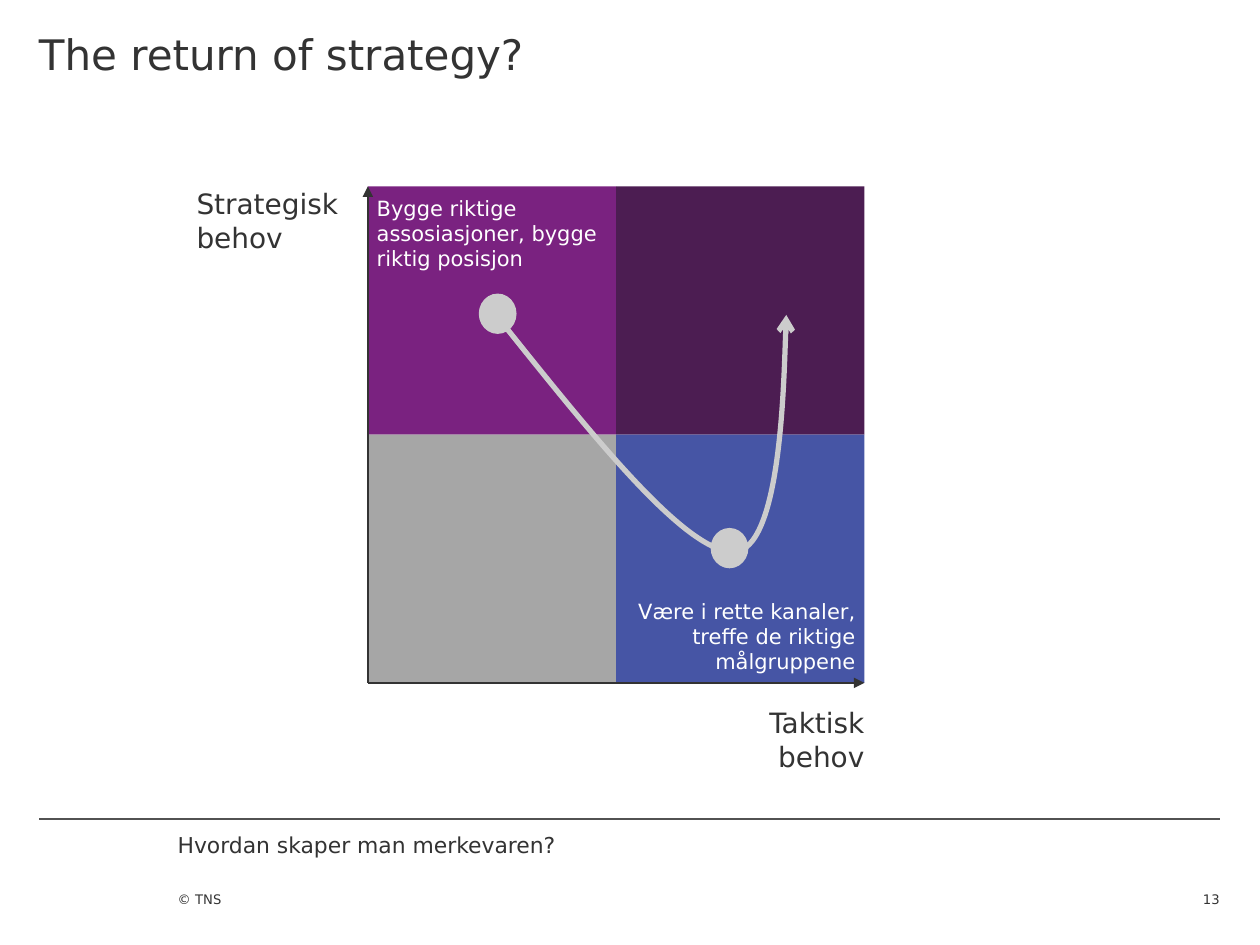
from lxml.etree import SubElement
from pptx import Presentation
from pptx.dml.color import RGBColor
from pptx.enum.shapes import MSO_CONNECTOR, MSO_SHAPE
from pptx.enum.text import MSO_ANCHOR, PP_ALIGN
from pptx.oxml.ns import qn
from pptx.util import Inches, Pt

INK = RGBColor(0x33, 0x33, 0x33)
RULE = RGBColor(0x52, 0x52, 0x52)
WHITE = RGBColor(0xFF, 0xFF, 0xFF)
PURPLE = RGBColor(0x7A, 0x22, 0x80)
PLUM = RGBColor(0x4C, 0x1D, 0x52)
GREY = RGBColor(0xA6, 0xA6, 0xA6)
BLUE = RGBColor(0x46, 0x55, 0xA5)
SILVER = RGBColor(0xCC, 0xCC, 0xCC)

WIDE, HIGH = 10, 7.5
LEFT, RIGHT = 0.31, 9.68
INDENT = 1.41
COL, ROW, CELL = 2.92, 1.48, 1.97
PAD = 0.07
DOT = (0.3, 0.32)
LABEL = (1.22, 0.39)
END, BASE = COL + 2 * CELL, ROW + 2 * CELL


def assign(item, values):
    for name, value in values.items():
        setattr(item, name, value)


def write(shape, text, size, color=INK, align=PP_ALIGN.LEFT,
          anchor=MSO_ANCHOR.TOP, pads=(0, 0, 0, 0)):
    frame = shape.text_frame
    sides = ("margin_left", "margin_top", "margin_right", "margin_bottom")
    assign(frame, dict(zip(sides, map(Inches, pads))))
    assign(frame, {"word_wrap": True, "vertical_anchor": anchor, "text": text})
    para = frame.paragraphs[0]
    para.alignment = align
    assign(para.runs[0].font, {"name": "DejaVu Sans", "size": Pt(size)})
    para.runs[0].font.color.rgb = color


def label(slide, box, text, size, **style):
    write(slide.shapes.add_textbox(*map(Inches, box)), text, size, **style)


def block(slide, kind, box, color):
    shape = slide.shapes.add_shape(kind, *map(Inches, box))
    shape.shadow.inherit = False
    shape.fill.solid()
    shape.fill.fore_color.rgb = color
    shape.line.fill.background()
    return shape


def stroke(shape, color, width, head=None):
    shape.line.color.rgb = color
    shape.line.width = Pt(width)
    props = shape._element.spPr
    if head:
        SubElement(props.find(qn("a:ln")), qn("a:tailEnd"), type=head)
    if props.find(qn("a:effectLst")) is None:
        SubElement(props, qn("a:effectLst"))


def line(slide, start, stop, color, width, head=None):
    ends = map(Inches, (*start, *stop))
    link = slide.shapes.add_connector(MSO_CONNECTOR.STRAIGHT, *ends)
    stroke(link, color, width, head)


def curve(slide, points, color, width, head):
    """Draw a chain of cubic curves: a start, then three points for each."""
    spots = [(Inches(x), Inches(y)) for x, y in points]
    pen = slide.shapes.build_freeform(*spots[0])
    pen.add_line_segments(spots[1:], close=False)
    shape = pen.convert_to_shape()
    shape.fill.background()
    stroke(shape, color, width, head)
    steps = list(shape._element.iter(qn("a:lnTo")))
    for first in range(0, len(steps), 3):
        trio = steps[first:first + 3]
        bend = SubElement(trio[0].getparent(), qn("a:cubicBezTo"))
        for step in trio:
            bend.append(step[0])
            step.getparent().remove(step)


def matrix(slide):
    colors = ((PURPLE, PLUM), (GREY, BLUE))
    cells = [
        block(slide, MSO_SHAPE.RECTANGLE,
              (COL + col * CELL, ROW + row * CELL, CELL, CELL), color)
        for row, pair in enumerate(colors) for col, color in enumerate(pair)
    ]
    pads = (PAD,) * 4
    write(cells[0], "Bygge riktige assosiasjoner, bygge riktig posisjon",
          12, WHITE, pads=pads)
    write(cells[3], "Være i rette kanaler, treffe de riktige målgruppene",
          12, WHITE, PP_ALIGN.RIGHT, MSO_ANCHOR.BOTTOM, pads)
    for stop in ((COL, ROW), (END, BASE)):
        line(slide, (COL, BASE), stop, INK, 1.5, "triangle")
    label(slide, (1.56, ROW, *LABEL), "Strategisk behov", 16)
    label(slide, (END - LABEL[0], 5.6, *LABEL), "Taktisk behov", 16,
          align=PP_ALIGN.RIGHT)


def journey(slide):
    points = ((3.92, 2.48), (4.68, 3.43), (5.43, 4.38), (5.82, 4.38),
              (6.2, 4.38), (6.24, 2.5), (6.24, 2.5))
    curve(slide, points, SILVER, 3, "arrow")
    for spot in ((3.8, 2.33), (5.64, 4.19)):
        block(slide, MSO_SHAPE.OVAL, (*spot, *DOT), SILVER)


def footer(slide):
    line(slide, (LEFT, 6.5), (RIGHT, 6.5), RULE, 0.75)
    label(slide, (INDENT, 6.6, 3.31, 0.42),
          "Hvordan skaper man merkevaren?", 12.5)
    label(slide, (INDENT, 6.92, 2.78, 0.28), "© TNS", 7.5,
          anchor=MSO_ANCHOR.BOTTOM)
    label(slide, (RIGHT - 0.55, 6.92, 0.55, 0.28), "13", 7.5,
          align=PP_ALIGN.RIGHT, anchor=MSO_ANCHOR.BOTTOM)


def main():
    deck = Presentation()
    assign(deck, {"slide_width": Inches(WIDE), "slide_height": Inches(HIGH)})
    slide = deck.slides.add_slide(deck.slide_layouts[6])
    footer(slide)
    label(slide, (LEFT, 0, RIGHT - LEFT, 0.15 * HIGH),
          "The return of strategy?", 24, pads=(0, 0.23, 0, 0))
    matrix(slide)
    journey(slide)
    deck.save("out.pptx")


if __name__ == "__main__":
    main()
